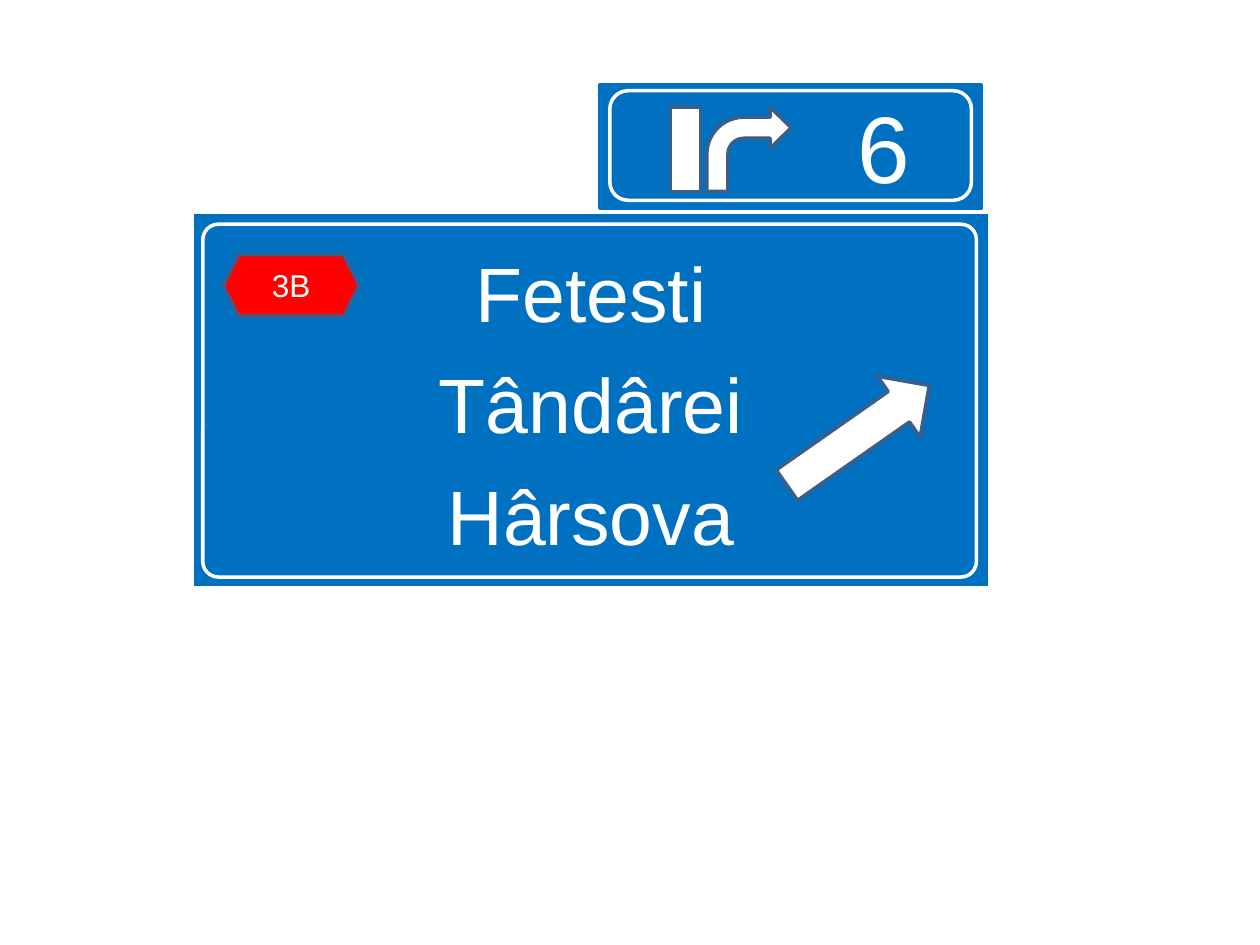
"""Build a motorway exit sign slide."""
from dataclasses import dataclass
from typing import Optional

from pptx import Presentation
from pptx.dml.color import RGBColor
from pptx.enum.shapes import MSO_SHAPE
from pptx.enum.text import MSO_ANCHOR, MSO_AUTO_SIZE, PP_ALIGN
from pptx.util import Inches, Pt

BLUE, RED, WHITE, OUTLINE = "0070C0", "FF0000", "FFFFFF", "3A5F8C"
FONT = "Arial"


@dataclass
class SignPart:
    """Describe one shape of the sign, with lengths in inches."""
    kind: MSO_SHAPE
    box: tuple[float, float, float, float]
    fill: Optional[str] = None
    line: str = OUTLINE
    adjustments: tuple[float, ...] = ()
    rotation: float = 0
    text: str = ""
    size: float = 18
    left_inset: float = 0.1


PARTS = [
    SignPart(MSO_SHAPE.RIGHT_ARROW, (6.12, 3.16, 1.38, 0.59), WHITE, rotation=325),
    SignPart(MSO_SHAPE.HEXAGON, (1.77, 2.02, 1.08, 0.49), RED, text="3B"),
    SignPart(MSO_SHAPE.ROUNDED_RECTANGLE, (1.61, 1.78, 6.14, 2.8), line=WHITE,
             adjustments=(0.044,)),
    SignPart(MSO_SHAPE.ROUNDED_RECTANGLE, (4.76, 0.67, 3.03, 0.98), BLUE, BLUE,
             adjustments=(0,), text="6", size=54, left_inset=1.57),
    SignPart(MSO_SHAPE.ROUNDED_RECTANGLE, (4.84, 0.72, 2.87, 0.87), line=WHITE),
    SignPart(MSO_SHAPE.RECTANGLE, (5.32, 0.85, 0.24, 0.67), WHITE),
    SignPart(MSO_SHAPE.BENT_ARROW, (5.61, 0.85, 0.67, 0.67), WHITE,
             adjustments=(0.25, 0.245, 0.25, 0.438)),
]


def color(value: str) -> RGBColor:
    """Turn a hex string into a colour."""
    return RGBColor.from_string(value)


def set_all(target, values: dict) -> None:
    """Set each named attribute of the target."""
    for name, value in values.items():
        setattr(target, name, value)


def paint(shape, fill: Optional[str], line: Optional[str]) -> None:
    """Set the fill and outline of a shape without a shadow."""
    shape.shadow.inherit = False
    if fill:
        shape.fill.solid()
        shape.fill.fore_color.rgb = color(fill)
    else:
        shape.fill.background()
    if line:
        shape.line.color.rgb = color(line)
        shape.line.width = Pt(2)
    else:
        shape.line.fill.background()


def write(shape, lines: list[str], size: float, frame_format: dict,
          space_before: float = 0) -> None:
    """Write centred white lines into a shape."""
    frame = shape.text_frame
    set_all(frame, {"word_wrap": True, "auto_size": MSO_AUTO_SIZE.NONE, **frame_format})
    for index, line in enumerate(lines):
        para = frame.add_paragraph() if index else frame.paragraphs[0]
        set_all(para, {"alignment": PP_ALIGN.CENTER, "space_before": Pt(space_before)})
        span = para.add_run()
        span.text = line
        set_all(span.font, {"name": FONT, "size": Pt(size)})
        span.font.color.rgb = color(WHITE)


def add_part(page, part: SignPart) -> None:
    """Draw one part of the sign."""
    shape = page.shapes.add_shape(part.kind, *map(Inches, part.box))
    shape.rotation = part.rotation
    for index, value in enumerate(part.adjustments):
        shape.adjustments[index] = value
    paint(shape, part.fill, part.line)
    if part.text:
        write(shape, [part.text], part.size, {
            "vertical_anchor": MSO_ANCHOR.MIDDLE,
            "margin_left": Inches(part.left_inset),
        })


def add_destinations(page) -> None:
    """Turn the subtitle into the main panel with its destinations."""
    panel = page.placeholders[1]
    left, top, width, height = map(Inches, (1.54, 1.7, 6.3, 2.95))
    set_all(panel, {"left": left, "top": top, "width": width, "height": height})
    paint(panel, BLUE, None)
    write(panel, ["Fetesti", "Tândârei", "Hârsova"], 44, {
        "vertical_anchor": MSO_ANCHOR.TOP,
        "margin_top": Inches(0.25),
        "margin_bottom": Inches(0.24),
    }, space_before=10.8)


def main() -> None:
    """Build and save the deck."""
    deck = Presentation()
    set_all(deck, {"slide_width": Inches(10), "slide_height": Inches(7.5)})
    page = deck.slides.add_slide(deck.slide_layouts[0])
    title = page.shapes.title.element
    title.getparent().remove(title)
    add_destinations(page)
    for part in PARTS:
        add_part(page, part)
    deck.save("out.pptx")


if __name__ == "__main__":
    main()
